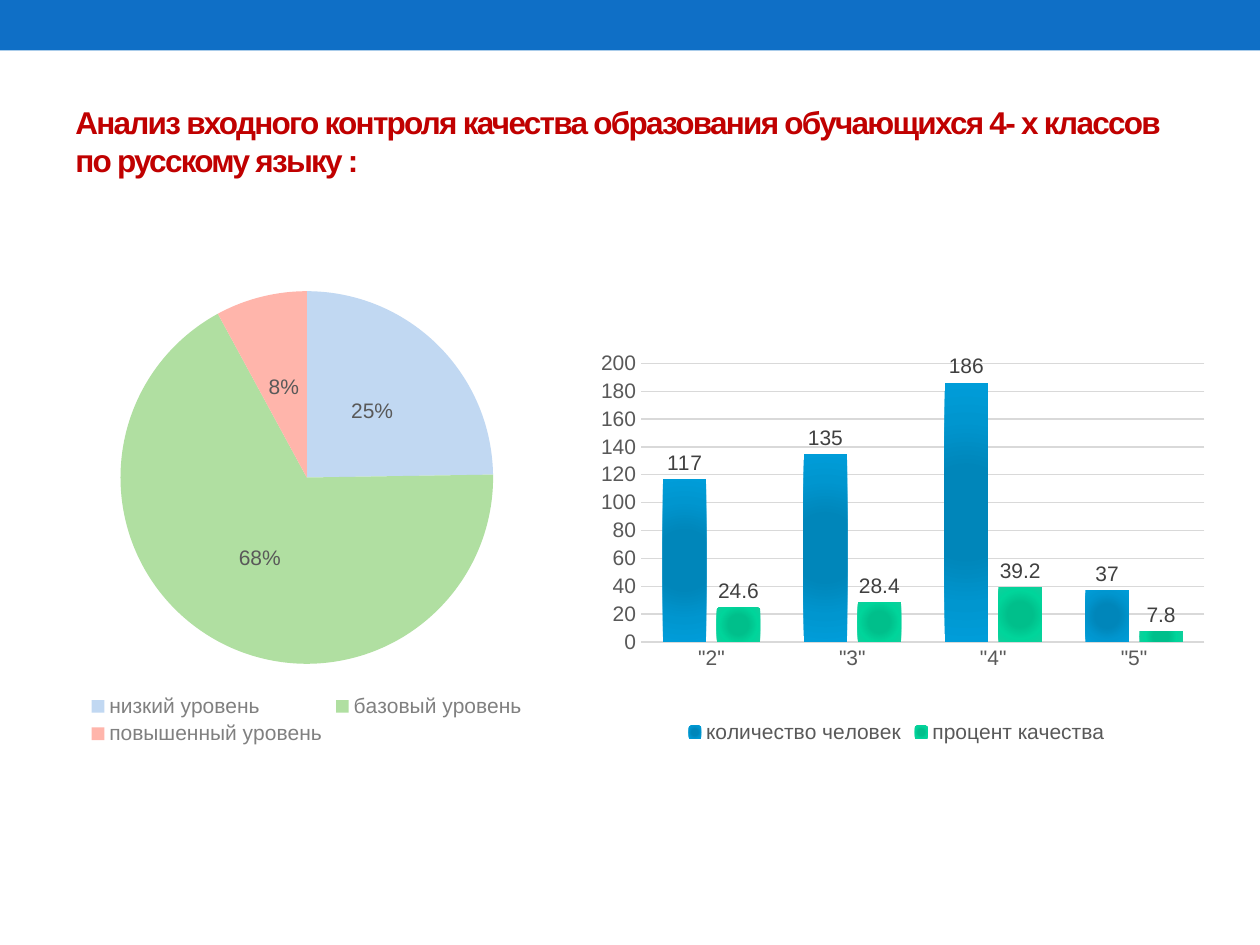
"""Build a slide on the entry test in Russian with a pie chart and a column chart."""
from dataclasses import dataclass

from lxml import etree
from pptx import Presentation
from pptx import util as u
from pptx.chart.data import CategoryChartData
from pptx.dml.color import RGBColor
from pptx.enum import chart as kinds
from pptx.enum import shapes, text
from pptx.oxml import parse_xml
from pptx.oxml.ns import nsdecls, qn

FONT = "Arial"
BLUE = RGBColor(0x0F, 0x6F, 0xC6)
RED = RGBColor(0xC0, 0x00, 0x00)
BLACK = RGBColor(0x00, 0x00, 0x00)
INK = RGBColor(0x40, 0x40, 0x40)
SLATE = RGBColor(0x59, 0x59, 0x59)
GREY = RGBColor(0x80, 0x80, 0x80)
RULE = RGBColor(0xD9, 0xD9, 0xD9)
PALE_BLUE = RGBColor(0xC1, 0xD8, 0xF2)
PALE_GREEN = RGBColor(0xB0, 0xDF, 0xA1)
PALE_RED = RGBColor(0xFF, 0xB5, 0xAB)
OCEAN = (RGBColor(0x00, 0x86, 0xBA), RGBColor(0x00, 0x96, 0xCF), RGBColor(0x00, 0x9D, 0xD9))
MINT = (RGBColor(0x00, 0xBF, 0x8B), RGBColor(0x00, 0xD5, 0x9B), RGBColor(0x10, 0xCF, 0x9B))


@dataclass(frozen=True)
class Frame:
    left: float
    top: float
    width: float
    height: float

    def lengths(self) -> tuple:
        return tuple(u.Cm(side) for side in (self.left, self.top, self.width, self.height))


@dataclass(frozen=True)
class Level:
    name: str
    percent: int
    color: RGBColor


@dataclass(frozen=True)
class Measure:
    name: str
    values: tuple
    shades: tuple


GRADES = ('"2"', '"3"', '"4"', '"5"')
LEVELS = (
    Level("низкий уровень", 25, PALE_BLUE),
    Level("базовый уровень", 68, PALE_GREEN),
    Level("повышенный уровень", 8, PALE_RED),
)
MEASURES = (
    Measure("количество человек", (117, 135, 186, 37), OCEAN),
    Measure("процент качества", (24.6, 28.4, 39.2, 7.8), MINT),
)


def style_font(font, color: RGBColor, size: float = 12, bold: bool = False) -> None:
    font.name, font.size, font.bold = FONT, u.Pt(size), bold
    font.color.rgb = color


def add_text(slide, words: str, frame: Frame, *, color: RGBColor, size: float,
             bold: bool = False, tracking: float = 0) -> None:
    box = slide.shapes.add_textbox(*frame.lengths())
    body = box.text_frame
    body.word_wrap = True
    body.vertical_anchor = text.MSO_ANCHOR.MIDDLE
    span = body.paragraphs[0].add_run()
    span.text = words
    style_font(span.font, color, size, bold)
    span.font._element.set("spc", str(int(tracking * 100)))


def add_band(slide, frame: Frame, color: RGBColor) -> None:
    band = slide.shapes.add_shape(shapes.MSO_SHAPE.RECTANGLE, *frame.lengths())
    band.shadow.inherit = False
    band.fill.solid()
    band.fill.fore_color.rgb = color
    band.line.fill.background()


def add_chart(slide, kind, frame: Frame, categories: list, series: list, legend_color: RGBColor):
    data = CategoryChartData()
    data.categories = categories
    for name, values in series:
        data.add_series(name, values)
    chart = slide.shapes.add_chart(kind, *frame.lengths(), data).chart
    style_font(chart.font, BLACK, 10)
    chart.has_title = False
    chart.has_legend = True
    chart.legend.position = kinds.XL_LEGEND_POSITION.BOTTOM
    chart.legend.include_in_layout = False
    style_font(chart.legend.font, legend_color)
    return chart


def label_series(series, position, color: RGBColor, number_format: str = "General") -> None:
    labels = series.data_labels
    labels.show_value = True
    labels.number_format, labels.number_format_is_linked = number_format, False
    labels.position = position
    style_font(labels.font, color)


def fill_radial(series, shades: tuple) -> None:
    inner, middle, outer = shades
    stops = "".join(
        f'<a:gs pos="{place * 1000}"><a:srgbClr val="{shade}"/></a:gs>'
        for place, shade in ((0, inner), (34, inner), (70, middle), (100, outer)))
    gradient = parse_xml(
        f'<a:gradFill {nsdecls("a")} rotWithShape="1"><a:gsLst>{stops}</a:gsLst>'
        '<a:path path="circle"><a:fillToRect l="100000" t="100000" r="100000" b="100000"/>'
        '</a:path></a:gradFill>')
    series.format.fill.solid()
    solid = series._element.spPr.find(qn("a:solidFill"))
    solid.getparent().replace(solid, gradient)


def place_plot(chart, **sides: float) -> None:
    area = chart._chartSpace.chart.plotArea
    for old in area.findall(qn("c:layout")):
        area.remove(old)
    layout = etree.Element(qn("c:layout"))
    manual = etree.SubElement(layout, qn("c:manualLayout"))
    settings = {"layoutTarget": "inner", "xMode": "edge", "yMode": "edge", **sides}
    for tag, value in settings.items():
        etree.SubElement(manual, qn(f"c:{tag}")).set("val", str(value))
    area.insert(0, layout)


def add_columns(slide, frame: Frame) -> None:
    chart = add_chart(slide, kinds.XL_CHART_TYPE.COLUMN_CLUSTERED, frame, GRADES,
                      [(measure.name, measure.values) for measure in MEASURES], SLATE)
    place_plot(chart, x=0.11, y=0.06, w=0.86, h=0.68)
    plot = chart.plots[0]
    plot.gap_width, plot.overlap, plot.vary_by_categories = 100, -24, False
    for series, measure in zip(plot.series, MEASURES):
        fill_radial(series, measure.shades)
        label_series(series, kinds.XL_LABEL_POSITION.OUTSIDE_END, INK)
    for axis in (chart.category_axis, chart.value_axis):
        axis.major_tick_mark = axis.minor_tick_mark = kinds.XL_TICK_MARK.NONE
        style_font(axis.tick_labels.font, SLATE)
    base, scale = chart.category_axis.format.line, chart.value_axis
    base.color.rgb, base.width = RULE, u.Pt(1)
    scale.minimum_scale, scale.maximum_scale, scale.major_unit = 0, 200, 20
    scale.format.line.fill.background()
    grid = scale.major_gridlines.format.line
    grid.color.rgb, grid.width = RULE, u.Pt(0.75)


def add_pie(slide, frame: Frame) -> None:
    chart = add_chart(slide, kinds.XL_CHART_TYPE.PIE, frame, [level.name for level in LEVELS],
                      [("Series 1", [level.percent for level in LEVELS])], GREY)
    chart.plots[0].vary_by_categories = True
    series = chart.plots[0].series[0]
    for index, level in enumerate(LEVELS):
        wedge = series.points[index].format
        wedge.fill.solid()
        wedge.fill.fore_color.rgb = level.color
        wedge.line.fill.background()
    label_series(series, kinds.XL_LABEL_POSITION.CENTER, SLATE, number_format='0"%"')


def main() -> None:
    deck = Presentation()
    deck.slide_width, deck.slide_height = u.Cm(25.4), u.Cm(19.05)
    page = deck.slides.add_slide(deck.slide_layouts[6])
    add_band(page, Frame(0, 0, 25.4, 1.02), BLUE)
    add_text(page, "Анализ входного контроля качества образования обучающихся 4- х классов "
             "по русскому языку :", Frame(1.27, 1.47, 22.86, 2.74),
             color=RED, size=18, bold=True, tracking=-1)
    add_columns(page, Frame(11.47, 6.83, 13.21, 8.26))
    add_pie(page, Frame(0.89, 5.52, 10.59, 9.6))
    deck.save("out.pptx")


if __name__ == "__main__":
    main()
